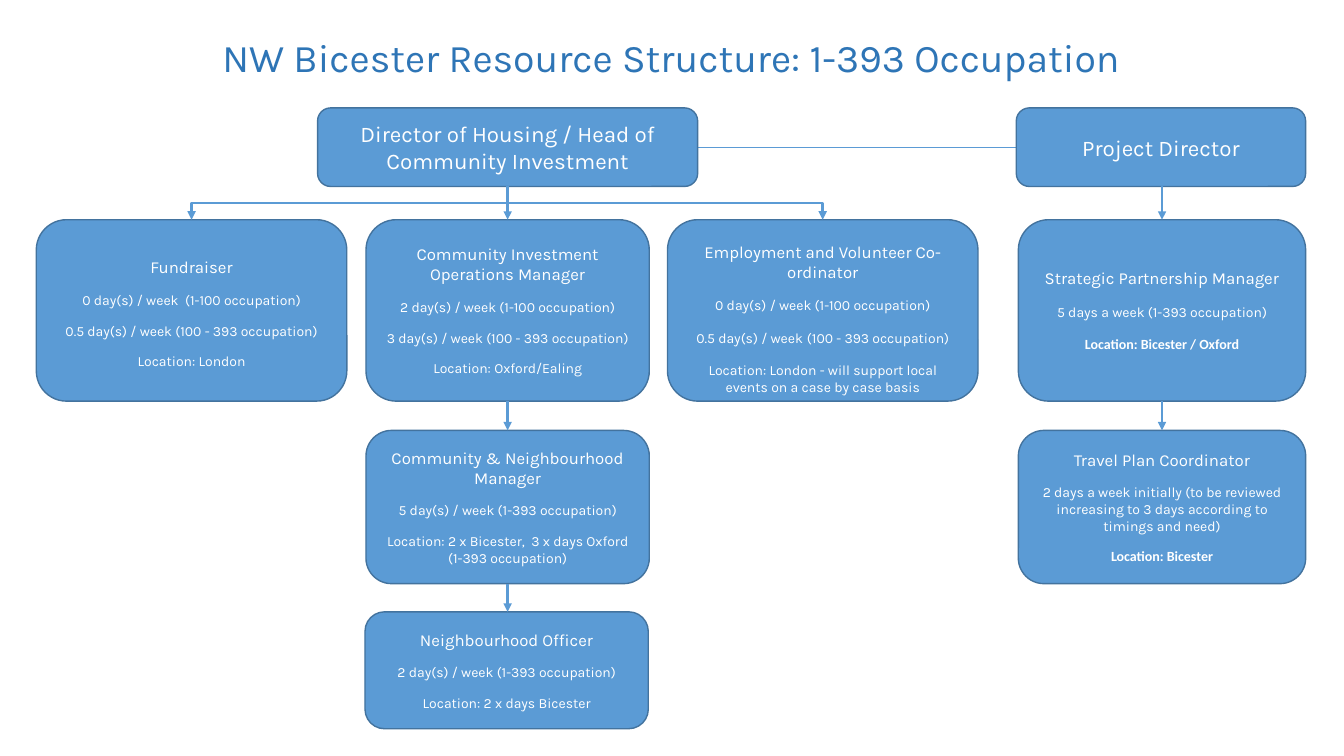
from dataclasses import dataclass

from lxml import etree
from pptx import Presentation
from pptx.dml.color import RGBColor
from pptx.enum.dml import MSO_LINE
from pptx.enum.shapes import MSO_CONNECTOR, MSO_SHAPE
from pptx.enum.text import MSO_ANCHOR, MSO_AUTO_SIZE, PP_ALIGN
from pptx.oxml.ns import qn
from pptx.util import Inches, Pt

ROUNDED = MSO_SHAPE.ROUNDED_RECTANGLE
STRAIGHT, ELBOW = MSO_CONNECTOR.STRAIGHT, MSO_CONNECTOR.ELBOW
CENTER = PP_ALIGN.CENTER
TOP, MIDDLE = MSO_ANCHOR.TOP, MSO_ANCHOR.MIDDLE

BLUE, OUTLINE, TITLE_BLUE, WHITE = "5B9BD5", "43739E", "2E75B6", "FFFFFF"
FONT, BOLD_FONT = "Karla", "Calibri"

# Rows: top and height
DIRECTORS = (1.07, 0.78)
MANAGERS = (2.18, 1.8)
TEAMS = (4.27, 1.52)
OFFICERS = (6.07, 1.16)

# Columns: left and width
LEFT_COLUMN = (0.36, 3.08)
MIDDLE_COLUMN = (3.63, 2.81)
RIGHT_COLUMN = (6.62, 3.08)
PROJECT_COLUMN = (10.1, 2.85)


@dataclass(frozen=True)
class Run:
    text: str
    size: float = 10
    bold: bool = False


@dataclass(frozen=True)
class Role:
    column: tuple[float, float]
    row: tuple[float, float]
    paragraphs: tuple[tuple[Run, ...], ...]
    top_inset: float = 0.05
    space_after: float = 10


@dataclass(frozen=True)
class Arrow:
    x: float
    start: float
    end: float


def role(column, row, name: str, *details: str, location: str = "", **options) -> Role:
    """A role with a name, plain detail lines and an optional bold location."""
    paragraphs = [(Run(name, 12),)] + [(Run(detail),) for detail in details]
    if location:
        paragraphs.append((Run(location, bold=True),))
    return Role(column, row, tuple(paragraphs), **options)


HOUSING_DIRECTOR = Role((3.15, 3.77), DIRECTORS,
                        ((Run("Director of Housing / Head of Community Investment", 16),),))
PROJECT_DIRECTOR = Role((10.08, 2.87), DIRECTORS, ((Run("Project Director", 16),),))

ROLES = (
    HOUSING_DIRECTOR,
    PROJECT_DIRECTOR,
    role(LEFT_COLUMN, MANAGERS, "Fundraiser",
         "0 day(s) / week  (1-100 occupation)",
         "0.5 day(s) / week (100 - 393 occupation)",
         "Location: London", top_inset=0.11),
    role(MIDDLE_COLUMN, MANAGERS, "Community Investment Operations Manager",
         "2 day(s) / week (1-100 occupation)",
         "3 day(s) / week (100 - 393 occupation)",
         "Location: Oxford/Ealing"),
    Role(RIGHT_COLUMN, MANAGERS, (
        (Run("Employment and Volunteer Co-ordinator", 12),),
        (Run("0 day(s) / week (1-100 occupation)"),),
        (Run("0.5 day(s) / week"), Run(" ", 12), Run("(100 - 393 occupation)")),
        (Run("Location: London - will support local events on a case by case basis"),),
    ), top_inset=0.21),
    role(PROJECT_COLUMN, MANAGERS, "Strategic Partnership Manager",
         "5 days a week (1-393 occupation)",
         location="Location: Bicester / Oxford", space_after=11),
    role(MIDDLE_COLUMN, TEAMS, "Community & Neighbourhood Manager",
         "5 day(s) / week (1-393 occupation)",
         "Location: 2 x Bicester,  3 x days Oxford (1-393 occupation)"),
    role(PROJECT_COLUMN, TEAMS, "Travel Plan Coordinator",
         "2 days a week initially (to be reviewed increasing to 3 days "
         "according to timings and need)",
         location="Location: Bicester"),
    role((3.62, 2.81), OFFICERS, "Neighbourhood Officer",
         "2 day(s) / week (1-393 occupation)",
         "Location: 2 x days Bicester"),
)


def center(column: tuple[float, float]) -> float:
    return column[0] + column[1] / 2


def bottom(row: tuple[float, float]) -> float:
    return row[0] + row[1]


MIDDLE_X, PROJECT_X = center(MIDDLE_COLUMN), center(PROJECT_COLUMN)
ARROWS = tuple(
    Arrow(x, bottom(upper), lower[0])
    for x, upper, lower in (
        (MIDDLE_X, DIRECTORS, MANAGERS),
        (MIDDLE_X, MANAGERS, TEAMS),
        (MIDDLE_X, TEAMS, OFFICERS),
        (PROJECT_X, DIRECTORS, MANAGERS),
        (PROJECT_X, MANAGERS, TEAMS),
    )
)


def color(value: str) -> RGBColor:
    return RGBColor.from_string(value)


def add_run(paragraph, run: Run, fill: str) -> None:
    text_run = paragraph.add_run()
    text_run.text = run.text
    font = text_run.font
    font.name = BOLD_FONT if run.bold else FONT
    font.size = Pt(run.size)
    font.bold = run.bold
    font.color.rgb = color(fill)


def add_title(slide, text: str) -> None:
    title = slide.shapes.title
    title.left, title.top = Inches(0.36), Inches(0.28)
    title.width, title.height = Inches(12.59), Inches(0.57)
    frame = title.text_frame
    frame.word_wrap = True
    frame.auto_size = MSO_AUTO_SIZE.NONE
    frame.vertical_anchor = TOP
    paragraph = frame.paragraphs[0]
    paragraph.alignment = CENTER
    add_run(paragraph, Run(text, 28), TITLE_BLUE)


def add_role(slide, item: Role) -> None:
    (left, width), (top, height) = item.column, item.row
    shape = slide.shapes.add_shape(ROUNDED, Inches(left), Inches(top),
                                   Inches(width), Inches(height))
    shape.shadow.inherit = False
    shape.fill.solid()
    shape.fill.fore_color.rgb = color(BLUE)
    shape.line.color.rgb = color(OUTLINE)
    shape.line.width = Pt(1)
    frame = shape.text_frame
    frame.word_wrap = True
    frame.vertical_anchor = MIDDLE
    frame.margin_top = Inches(item.top_inset)
    for index, runs in enumerate(item.paragraphs):
        paragraph = frame.add_paragraph() if index else frame.paragraphs[0]
        paragraph.alignment = CENTER
        if index < len(item.paragraphs) - 1:
            paragraph.space_after = Pt(item.space_after)
        for run in runs:
            add_run(paragraph, run, WHITE)


def add_line(slide, kind, x1: float, y1: float, x2: float, y2: float,
             width: float = 2, arrow: bool = True):
    connector = slide.shapes.add_connector(kind, Inches(x1), Inches(y1),
                                           Inches(x2), Inches(y2))
    connector.line.color.rgb = color(BLUE)
    connector.line.width = Pt(width)
    if arrow:
        etree.SubElement(connector.line._get_or_add_ln(), qn("a:tailEnd"), type="triangle")
    etree.SubElement(connector._element.spPr, qn("a:effectLst"))
    return connector


def add_branch(slide, x1: float, y1: float, x2: float, y2: float) -> None:
    """An elbow that leaves downwards: laid out sideways, then turned."""
    middle_x, middle_y = (x1 + x2) / 2, (y1 + y2) / 2
    drop, reach = (y2 - y1) / 2, abs(x2 - x1) / 2
    side = 1 if x2 > x1 else -1
    connector = add_line(slide, ELBOW, middle_x + side * drop, middle_y - reach,
                         middle_x - side * drop, middle_y + reach)
    degrees = 270 if side > 0 else 90
    connector._element.spPr.find(qn("a:xfrm")).set("rot", str(degrees * 60000))


def main() -> None:
    presentation = Presentation()
    presentation.slide_width, presentation.slide_height = Inches(13.33), Inches(7.5)
    slide = presentation.slides.add_slide(presentation.slide_layouts[5])
    add_title(slide, "NW Bicester Resource Structure: 1-393 Occupation")

    # Dashed links between the directors, one each way
    ends = (sum(HOUSING_DIRECTOR.column), PROJECT_DIRECTOR.column[0])
    for start, end in (ends, ends[::-1]):
        link = add_line(slide, STRAIGHT, start, 1.46, end, 1.46, width=0.75, arrow=False)
        link.line.dash_style = MSO_LINE.DASH

    # Role boxes
    for item in ROLES:
        add_role(slide, item)

    # Reporting lines
    for column in (LEFT_COLUMN, RIGHT_COLUMN):
        add_branch(slide, MIDDLE_X, bottom(DIRECTORS), center(column), MANAGERS[0])
    for arrow in ARROWS:
        add_line(slide, STRAIGHT, arrow.x, arrow.start, arrow.x, arrow.end)

    presentation.save("out.pptx")


if __name__ == "__main__":
    main()
